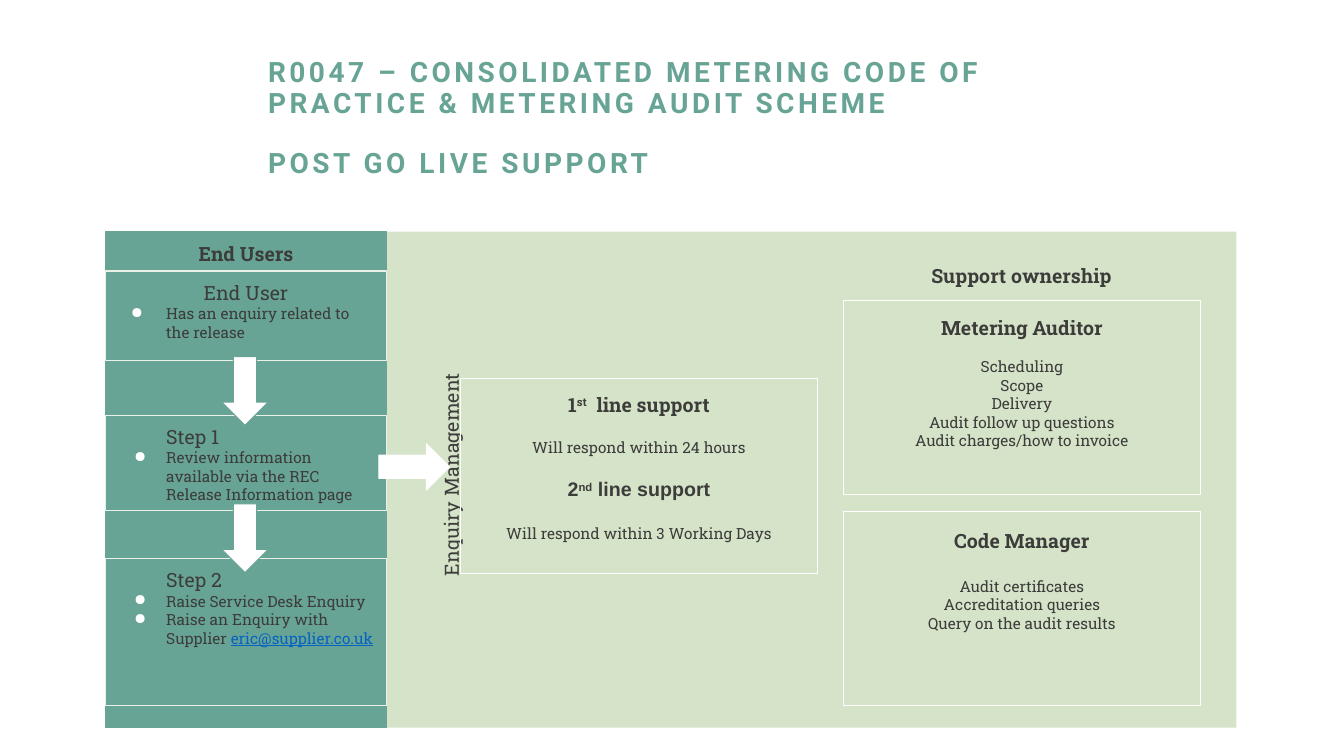
from dataclasses import dataclass

from lxml import etree
from pptx import Presentation
from pptx.dml.color import RGBColor
from pptx.enum.shapes import MSO_SHAPE
from pptx.enum.text import MSO_ANCHOR, MSO_AUTO_SIZE, PP_ALIGN
from pptx.oxml.ns import qn
from pptx.util import Cm, Pt

RECT, DOWN, RIGHT = MSO_SHAPE.RECTANGLE, MSO_SHAPE.DOWN_ARROW, MSO_SHAPE.RIGHT_ARROW
LEFT, CENTER = PP_ALIGN.LEFT, PP_ALIGN.CENTER
TOP = MSO_ANCHOR.TOP

GREEN = RGBColor(0x68, 0xA4, 0x95)
PALE = RGBColor(0xD5, 0xE3, 0xC8)
EDGE = RGBColor(0xEB, 0xF1, 0xE6)
WHITE = RGBColor(0xFF, 0xFF, 0xFF)
INK = RGBColor(0x3C, 0x3C, 0x3B)
BLUE = RGBColor(0x05, 0x63, 0xC1)
SLAB = "Roboto Slab"
HEAD, BODY = 14, 11


@dataclass
class Run:
    text: str
    sup: bool = False
    email: bool = False


@dataclass
class Line:
    runs: list[Run]
    size: int = BODY
    bold: bool = False
    before: float = 0
    align: PP_ALIGN = CENTER
    margin: float = 0
    hang: float = 0  # width of the bullet's hanging indent
    font: str = SLAB


@dataclass
class Box:
    left: float
    top: float
    width: float
    height: float
    lines: list[Line]
    fill: RGBColor | None = None
    edge: RGBColor | None = None
    inset: float = 0.25


@dataclass
class Arrow:
    kind: MSO_SHAPE
    left: float
    top: float
    width: float
    height: float
    edge: RGBColor


def heading(text: str) -> Line:
    return Line([Run(text)], HEAD, True)


def body(*texts: str, before: float = 0) -> list[Line]:
    return [Line([Run(t)], before=0 if i else before) for i, t in enumerate(texts)]


def step(text: str) -> Line:
    return Line([Run(text)], HEAD, align=LEFT, margin=1.27)


def bullet(*runs: Run, hang: float = 0.81) -> Line:
    return Line(list(runs), align=LEFT, margin=1.27, hang=hang)


def support(number: str, suffix: str, rest: str, **kwargs) -> Line:
    return Line([Run(number), Run(suffix, sup=True), Run(rest)], HEAD, True, **kwargs)


def write(tf, lines: list[Line], inset: float = 0.25) -> None:
    tf.word_wrap, tf.vertical_anchor = True, TOP
    tf.margin_left = tf.margin_right = tf.margin_bottom = Cm(0.25)
    tf.margin_top = Cm(inset)
    for i, line in enumerate(lines):
        p = tf.add_paragraph() if i else tf.paragraphs[0]
        p.alignment = line.align
        pPr = p._p.get_or_add_pPr()
        pPr.set("marL", str(Cm(line.margin)))
        pPr.set("indent", str(-Cm(line.hang)))
        if line.hang:
            color = etree.SubElement(pPr, qn("a:buClr"))
            etree.SubElement(color, qn("a:srgbClr"), val=str(WHITE))
            etree.SubElement(pPr, qn("a:buChar"), char="●")
        if line.before:
            p.space_before = Pt(line.before)
        for run in line.runs:
            r = p.add_run()
            r.text = run.text
            r.font.name, r.font.size, r.font.bold = line.font, Pt(line.size), line.bold
            r.font.color.rgb = BLUE if run.email else INK
            if run.email:
                r.font.underline = True
            if run.sup:
                r._r.get_or_add_rPr().set("baseline", "30000")


def add_shape(slide, kind: MSO_SHAPE, item: Box | Arrow, fill: RGBColor | None):
    sp = slide.shapes.add_shape(kind, Cm(item.left), Cm(item.top), Cm(item.width), Cm(item.height))
    sp.shadow.inherit = False
    if fill is None:
        sp.fill.background()
    else:
        sp.fill.solid()
        sp.fill.fore_color.rgb = fill
    if item.edge is None:
        sp.line.fill.background()
    else:
        sp.line.color.rgb = item.edge
        sp.line.width = Pt(0.75)
    return sp


def add_box(slide, box: Box) -> None:
    sp = add_shape(slide, RECT, box, box.fill)
    if box.lines:
        write(sp.text_frame, box.lines, box.inset)


def add_title(slide) -> None:
    sp = slide.shapes.title
    sp.left, sp.top, sp.width, sp.height = Cm(6.5), Cm(1.35), Cm(21.41), Cm(1.88)
    tf = sp.text_frame
    tf.text = ("R0047 – CONSOLIDATED METERING CODE OF PRACTICE & METERING AUDIT SCHEME\n"
               "POST GO LIVE SUPPORT")
    tf.word_wrap, tf.vertical_anchor, tf.auto_size = True, TOP, MSO_AUTO_SIZE.NONE
    for i, p in enumerate(tf.paragraphs):
        p.alignment, p.line_spacing = LEFT, 0.9
        p.space_before = Pt(21.5 * i)
        r = p.runs[0]
        r.font.name, r.font.size, r.font.bold = "Roboto", Pt(20), True
        r.font.color.rgb = GREEN
        r._r.get_or_add_rPr().set("spc", "250")


# Background panels
USERS_LEFT, USERS_WIDTH = 2.67, 7.06
PANELS = [
    Box(9.7, 5.84, 21.46, 12.5, [], PALE),
    Box(USERS_LEFT, 5.84, USERS_WIDTH, 12.5, [heading("End Users")], GREEN, GREEN),
]

# End user steps: top, height, lines
STEPS = [
    (6.83, 2.26, [Line([Run("End User")], HEAD),
                  bullet(Run("Has an enquiry related to the release"), hang=0.89)]),
    (10.46, 2.41, [step("Step 1"),
                   bullet(Run("Review information available via the REC Release Information page"))]),
    (14.07, 3.71, [step("Step 2"),
                   bullet(Run("Raise Service Desk Enquiry")),
                   bullet(Run("Raise an Enquiry with Supplier "),
                          Run("eric@supplier.co.uk", email=True))]),
]

# Support boxes: left, top, top inset, lines
SUPPORT = [
    (11.61, 9.55, 0.35, [
        support("1", "st", "  line support"),
        *body("Will respond within 24 hours", before=15.7),
        support("2", "nd", " line support", before=14.6, font="Arial"),
        *body("Will respond within 3 Working Days", before=16.7)]),
    (21.26, 7.57, 0.38, [
        heading("Metering Auditor"),
        *body("Scheduling", "Scope", "Delivery", "Audit follow up questions",
              "Audit charges/how to invoice", before=13)]),
    (21.26, 12.88, 0.46, [
        heading("Code Manager"),
        *body("Audit certificates", "Accreditation queries",
              "Query on the audit results", before=17)]),
]

ARROWS = [
    Arrow(DOWN, 5.59, 8.99, 1.17, 1.73, GREEN),
    Arrow(DOWN, 5.59, 12.7, 1.17, 1.73, GREEN),
    Arrow(RIGHT, 9.55, 11.18, 1.78, 1.17, WHITE),
]


def main() -> None:
    prs = Presentation()
    prs.slide_width, prs.slide_height = Cm(33.87), Cm(19.05)
    slide = prs.slides.add_slide(prs.slide_layouts[5])
    add_title(slide)

    for panel in PANELS:
        add_box(slide, panel)

    # Vertical label
    label = slide.shapes.add_textbox(Cm(5.79), Cm(11.35), Cm(11.28), Cm(1.22))
    label.rotation = 270
    write(label.text_frame, [Line([Run("Enquiry Management")], HEAD)])

    # Steps and support ownership
    add_box(slide, Box(21.59, 6.4, 8.31, 1.02, [heading("Support ownership")], PALE))
    for top, height, lines in STEPS:
        add_box(slide, Box(USERS_LEFT, top, USERS_WIDTH, height, lines, edge=EDGE))
    for left, top, inset, lines in SUPPORT:
        add_box(slide, Box(left, top, 8.99, 4.9, lines, edge=WHITE, inset=inset))

    for arrow in ARROWS:
        add_shape(slide, arrow.kind, arrow, WHITE)
    prs.save("out.pptx")


if __name__ == "__main__":
    main()
